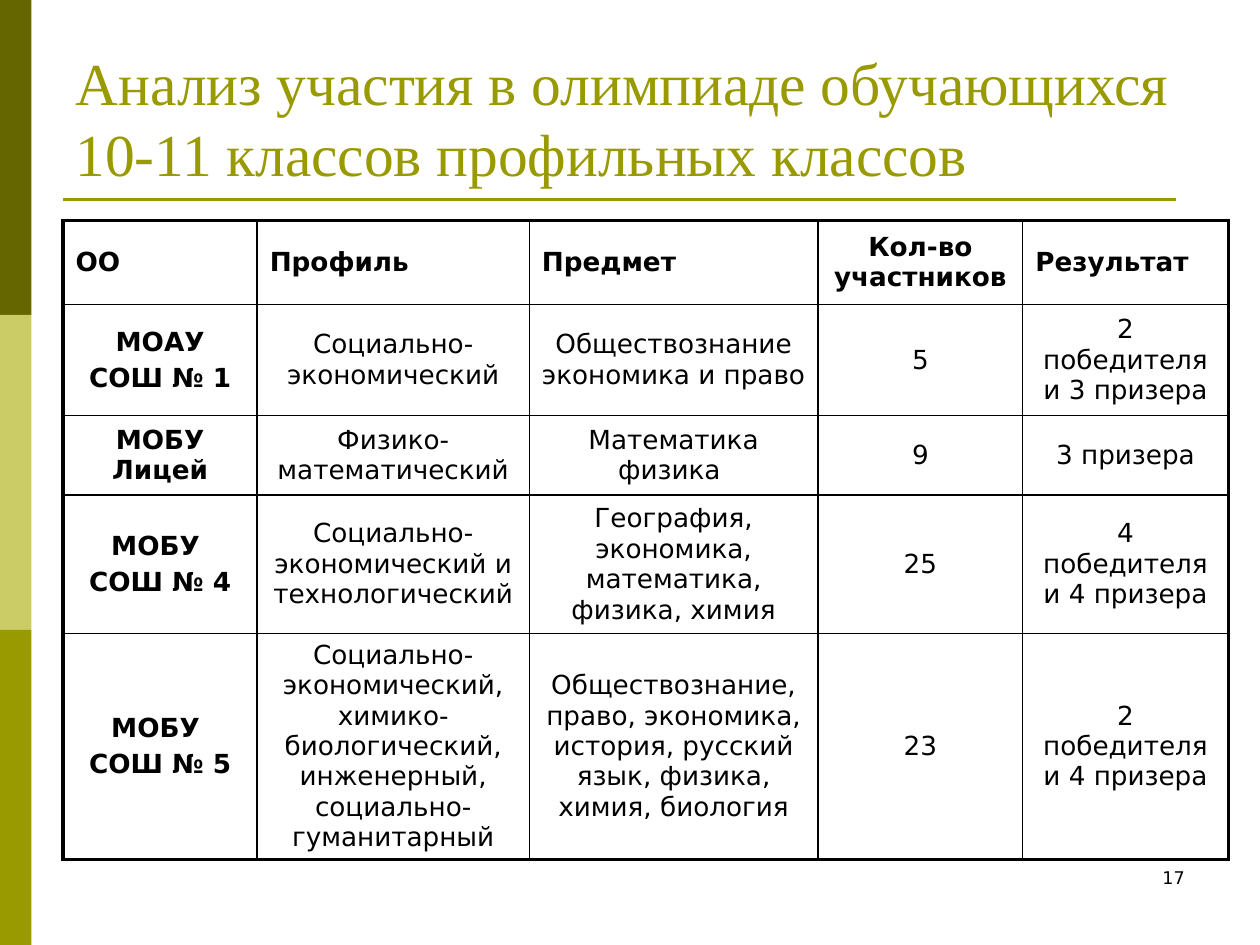
"""Build the slide on the olympiad results of specialised classes."""
from lxml import etree
from pptx import Presentation, util as u
from pptx.dml.color import RGBColor
from pptx.enum import shapes, text
from pptx.oxml import ns

COLORS = {"dark": "666600", "light": "CCCC66", "olive": "999900", "black": "000000"}
SERIF, SANS = "Times New Roman", "DejaVu Sans"
COLUMNS = [111, 155.5, 165, 117, 117.5]
ROWS = [48, 63.5, 45.5, 79, 129]
HEADER = ["ОО", "Профиль", "Предмет", "Кол-во участников", "Результат"]
RESULTS = [
    ["МОАУ\nСОШ № 1", "Социально-экономический", "Обществознание экономика и право",
     "5", "2 победителя и 3 призера"],
    ["МОБУ Лицей", "Физико-математический", "Математика физика ", "9", "3 призера"],
    ["МОБУ \nСОШ № 4", "Социально-экономический и технологический",
     "География, экономика, математика, физика, химия", "25", "4 победителя и 4 призера"],
    ["МОБУ \nСОШ № 5",
     "Социально-экономический, химико-биологический, инженерный, социально-гуманитарный",
     "Обществознание, право, экономика, история, русский язык, физика, химия, биология",
     "23", "2 победителя и 4 призера"],
]


class SlideBuilder:
    """Hold the style and the current slide."""

    def __init__(self, presentation):
        self.slide = presentation.slides.add_slide(presentation.slide_layouts[5])
        self.shapes = self.slide.shapes

    def color(self, name):
        return RGBColor.from_string(COLORS[name])

    def set_text(self, frame, content, font, size, color="black", bold=False,
                 align=text.PP_ALIGN.LEFT, before=0):
        frame.word_wrap = True
        frame.text = content
        for paragraph in frame.paragraphs:
            paragraph.alignment = align
            paragraph.space_before = u.Pt(before)
            paragraph.font.name = font
            paragraph.font.size = u.Pt(size)
            paragraph.font.bold = bold
            paragraph.font.color.rgb = self.color(color)

    def band(self, left, top, width, height, color):
        shape = self.shapes.add_shape(shapes.MSO_SHAPE.RECTANGLE,
                                      *map(u.Pt, (left, top, width, height)))
        shape.shadow.inherit = False
        shape.fill.solid()
        shape.fill.fore_color.rgb = self.color(color)
        shape.line.fill.background()

    def rule(self, left, right, top, color, width):
        line = self.shapes.add_connector(shapes.MSO_CONNECTOR.STRAIGHT,
                                         *map(u.Pt, (left, top, right, top)))
        line.line.color.rgb = self.color(color)
        line.line.width = u.Pt(width)
        etree.SubElement(line._element.spPr, ns.qn("a:effectLst"))

    def title(self, content, left, top, width, height):
        title = self.shapes.title
        title.left, title.top, title.width, title.height = map(u.Pt, (left, top, width, height))
        title.text_frame.vertical_anchor = text.MSO_ANCHOR.BOTTOM
        title.text_frame.auto_size = text.MSO_AUTO_SIZE.NONE
        self.set_text(title.text_frame, content, SERIF, 34, "olive")

    def page_number(self, content, left, top, width, height):
        box = self.shapes.add_textbox(*map(u.Pt, (left, top, width, height)))
        self.set_text(box.text_frame, content, SANS, 10, align=text.PP_ALIGN.RIGHT)

    def borders(self, cell, widths):
        properties = cell._tc.get_or_add_tcPr()
        for index, (side, width) in enumerate(zip("LRTB", widths)):
            line = etree.Element(ns.qn(f"a:ln{side}"), w=str(u.Pt(width)))
            fill = etree.SubElement(line, ns.qn("a:solidFill"))
            etree.SubElement(fill, ns.qn("a:srgbClr"), val=COLORS["black"])
            properties.insert(index, line)

    def table(self, rows, left, top, widths, heights, outer=2.25, inner=1):
        frame = self.shapes.add_table(len(heights), len(widths), *map(
            u.Pt, (left, top, sum(widths), sum(heights))))
        table = frame.table
        table.first_row = table.horz_banding = False
        for column, width in zip(table.columns, widths):
            column.width = u.Pt(width)
        for row, height in zip(table.rows, heights):
            row.height = u.Pt(height)
        last_row, last_column = len(heights) - 1, len(widths) - 1
        for r, row in enumerate(rows):
            for c, content in enumerate(row):
                cell = table.cell(r, c)
                cell.fill.background()
                cell.vertical_anchor = text.MSO_ANCHOR.MIDDLE
                left_aligned = r == 0 and c != 3
                align = text.PP_ALIGN.LEFT if left_aligned else text.PP_ALIGN.CENTER
                self.set_text(cell.text_frame, content, SANS, 15, bold=r == 0 or c == 0,
                              align=align, before=3)
                edges = (c == 0, c == last_column, r == 0, r == last_row)
                self.borders(cell, [outer if edge else inner for edge in edges])


def main():
    presentation = Presentation()
    presentation.slide_width, presentation.slide_height = u.Pt(720), u.Pt(540)
    builder = SlideBuilder(presentation)
    for index, color in enumerate(("dark", "light", "olive")):
        builder.band(0, 180 * index, 18, 180, color)
    builder.rule(36, 672, 114, "olive", 1.5)
    builder.table([HEADER] + RESULTS, 36, 126, COLUMNS, ROWS)
    builder.title("Анализ участия в олимпиаде обучающихся 10-11 классов профильных классов",
                  36, 21.5, 648, 90)
    builder.page_number("17", 516, 492, 168, 36)
    presentation.save("out.pptx")


if __name__ == "__main__":
    main()
